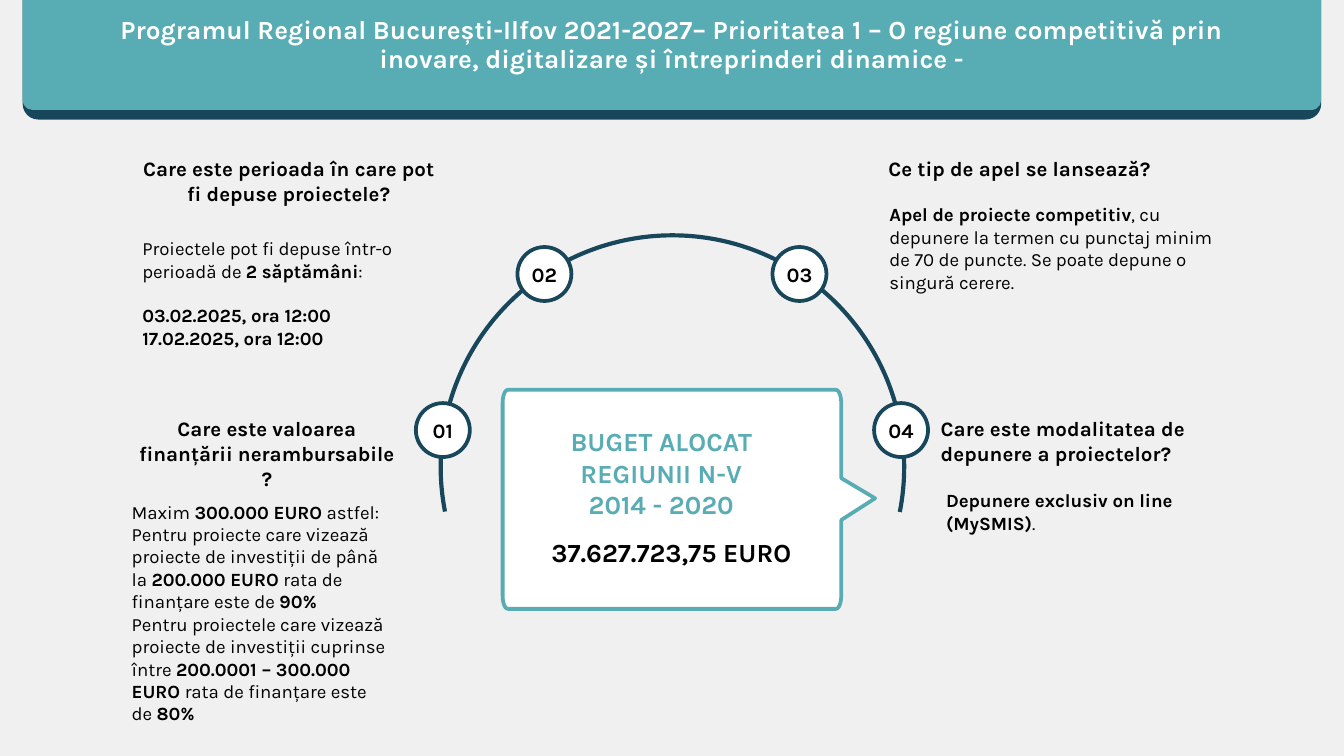
import math
from dataclasses import dataclass

from pptx import Presentation
from pptx import util as u
from pptx.dml.color import RGBColor
from pptx.enum import shapes, text


@dataclass(frozen=True)
class Theme:
    font: str = "Karla"
    background: RGBColor = RGBColor(0xF0, 0xF0, 0xF0)
    navy: RGBColor = RGBColor(0x18, 0x47, 0x5C)
    teal: RGBColor = RGBColor(0x58, 0xAC, 0xB4)
    white: RGBColor = RGBColor(0xFF, 0xFF, 0xFF)
    black: RGBColor = RGBColor(0, 0, 0)
    title: int = 14
    heading: int = 11
    body: int = 10


THEME = Theme()
CENTER = text.PP_ALIGN.CENTER
LEFT = text.PP_ALIGN.LEFT
MIDDLE_X = 12.7

# Heading boxes: left, top, width, height, alignment, content
HEADINGS = [
    (2.69, 2.95, 5.54, 0.94, CENTER, "Care este perioada în care pot fi depuse proiectele?"),
    (16.79, 2.95, 6.35, 0.94, LEFT, "Ce tip de apel se lansează?"),
    (2.62, 7.87, 4.85, 1.42, CENTER, "Care este valoarea finanțării nerambursabile ?"),
    (17.78, 7.87, 5.31, 1.8, LEFT, "Care este modalitatea de depunere a proiectelor?"),
]
# Answer boxes; text between double asterisks is bold
ANSWERS = [
    (2.69, 4.48, 5.54, 2.13, [
        "Proiectele pot fi depuse într-o perioadă de **2 săptămâni**:",
        "**03.02.2025, ora 12:00**",
        "**17.02.2025, ora 12:00**"]),
    (16.81, 3.84, 6.35, 2.13, [
        "**Apel de proiecte competitiv**, cu depunere la termen cu punctaj minim "
        "de 70 de puncte. Se poate depune o singură cerere."]),
    (2.49, 9.46, 4.85, 4.27, [
        "Maxim **300.000 EURO **astfel:",
        "Pentru proiecte care vizează proiecte de investiții de până la "
        "**200.000 EURO **rata de finanțare este de **90%**",
        "Pentru proiectele care vizează proiecte de investiții cuprinse între "
        "**200.0001 – 300.000 EURO **rata de finanțare este de **80%**"]),
    (17.88, 9.25, 5.31, 0.86, ["**Depunere exclusiv on line (MySMIS)**."]),
]
# Step markers: label, centre offset from the middle, centre height
STEPS = [("01", -4.33, 8.13), ("02", -2.41, 5.18),
         ("03", 2.41, 5.18), ("04", 4.33, 8.13)]


def paint(shape, fill=None, line=None, weight=2):
    shape.shadow.inherit = False
    if fill is None:
        shape.fill.background()
    else:
        shape.fill.solid()
        shape.fill.fore_color.rgb = fill
    if line is None:
        shape.line.fill.background()
    else:
        shape.line.color.rgb = line
        shape.line.width = u.Pt(weight)


def add_preset(slide, kind, left, top, width, height, **style):
    shape = slide.shapes.add_shape(kind, u.Cm(left), u.Cm(top), u.Cm(width), u.Cm(height))
    paint(shape, **style)
    return shape


def write(frame, contents, size, color=THEME.black, align=LEFT):
    """Fill a text frame, one paragraph for each string."""
    frame.word_wrap = True
    frame.margin_left = frame.margin_right = frame.margin_top = frame.margin_bottom = 0
    for index, content in enumerate(contents):
        paragraph = frame.paragraphs[0] if index == 0 else frame.add_paragraph()
        paragraph.alignment = align
        font = paragraph.font
        font.name, font.size, font.color.rgb = THEME.font, u.Pt(size), color
        parts = [(part, number % 2 == 1)
                 for number, part in enumerate(content.split("**")) if part]
        agreed = len({bold for _, bold in parts}) == 1
        if agreed:
            font.bold = parts[0][1]
        for part, bold in parts:
            run = paragraph.add_run()
            run.text = part
            if not agreed:
                run.font.bold = bold


def add_text(slide, left, top, width, height, contents, size, **style):
    box = slide.shapes.add_textbox(u.Cm(left), u.Cm(top), u.Cm(width), u.Cm(height))
    write(box.text_frame, contents, size, **style)
    return box.text_frame


def add_banner(slide):
    for height, radius, color in ((2.26, 0.13, THEME.navy), (2.08, 0.09, THEME.teal)):
        band = add_preset(slide, shapes.MSO_SHAPE.ROUND_2_SAME_RECTANGLE,
                          0.43, 0, 24.54, height, fill=color)
        band.adjustments[0], band.adjustments[1] = 0, radius
    frame = add_text(
        slide, 1.9, 0.33, 21.6, 1.07,
        ["**Programul Regional București-Ilfov 2021-2027– Prioritatea 1 – O regiune "
         "competitivă prin inovare, digitalizare și întreprinderi dinamice -**"],
        THEME.title, color=THEME.white, align=CENTER)
    paragraph = frame.paragraphs[0]
    paragraph.line_spacing = 0.9
    # The first line hangs to the left of the second
    properties = paragraph.font._element.getparent()
    properties.set("marL", "0")
    properties.set("indent", str(int(u.Cm(-0.8))))


def add_steps(slide):
    arc = add_preset(slide, shapes.MSO_SHAPE.ARC, 8.33, 4.45, 8.76, 8.76,
                     line=THEME.navy, weight=2.25)
    arc.adjustments[0], arc.adjustments[1] = 101.35, 6.71
    diameter = 1.02
    for label, offset, middle in STEPS:
        circle = add_preset(slide, shapes.MSO_SHAPE.OVAL,
                            MIDDLE_X + offset - diameter / 2, middle - diameter / 2,
                            diameter, diameter, fill=THEME.white, line=THEME.navy)
        frame = circle.text_frame
        write(frame, [f"**{label}**"], THEME.heading, align=CENTER)
        frame.vertical_anchor = text.MSO_ANCHOR.MIDDLE


def corner(x, y, start, radius_x=0.1, radius_y=0.25, steps=6):
    """Points of a quarter ellipse around (x, y), clockwise from start degrees."""
    angles = [math.radians(start + 90 * step / steps) for step in range(steps + 1)]
    return [(x + radius_x * math.cos(angle), y + radius_y * math.sin(angle))
            for angle in angles]


def add_budget(slide):
    # Callout with its pointer on the right
    left, right, top, bottom = 9.6, 15.8, 7.62, 11.26
    pointer = [(15.9, 9.04), (16.54, 9.42), (15.9, 9.83)]
    points = (corner(left, top, 180) + corner(right, top, 270) + pointer
              + corner(right, bottom, 0) + corner(left, bottom, 90))
    outline = [(u.Cm(x), u.Cm(y)) for x, y in points]
    builder = slide.shapes.build_freeform(*outline[0])
    builder.add_line_segments(outline[1:], close=True)
    paint(builder.convert_to_shape(), fill=THEME.white, line=THEME.teal)
    add_text(slide, 10.11, 8.05, 4.78, 1.8,
             ["**BUGET ALOCAT REGIUNII N-V**", "**2014 - 2020**"],
             THEME.title, color=THEME.teal, align=CENTER)
    add_text(slide, 10.11, 10.14, 5.16, 0.6, ["**37.627.723,75 EURO**"],
             THEME.title, align=CENTER)


def add_questions(slide):
    for *place, align, heading in HEADINGS:
        add_text(slide, *place, [f"**{heading}**"], THEME.heading, align=align)
    frames = [add_text(slide, *answer, THEME.body) for answer in ANSWERS]
    # One open line ahead of the dates
    frames[0].paragraphs[1].space_before = u.Pt(12)


def main():
    presentation = Presentation()
    presentation.slide_width, presentation.slide_height = u.Cm(25.4), u.Cm(14.29)
    slide = presentation.slides.add_slide(presentation.slide_layouts[6])
    slide.background.fill.solid()
    slide.background.fill.fore_color.rgb = THEME.background
    add_banner(slide)
    add_steps(slide)
    add_questions(slide)
    add_budget(slide)
    presentation.save("out.pptx")


if __name__ == "__main__":
    main()
